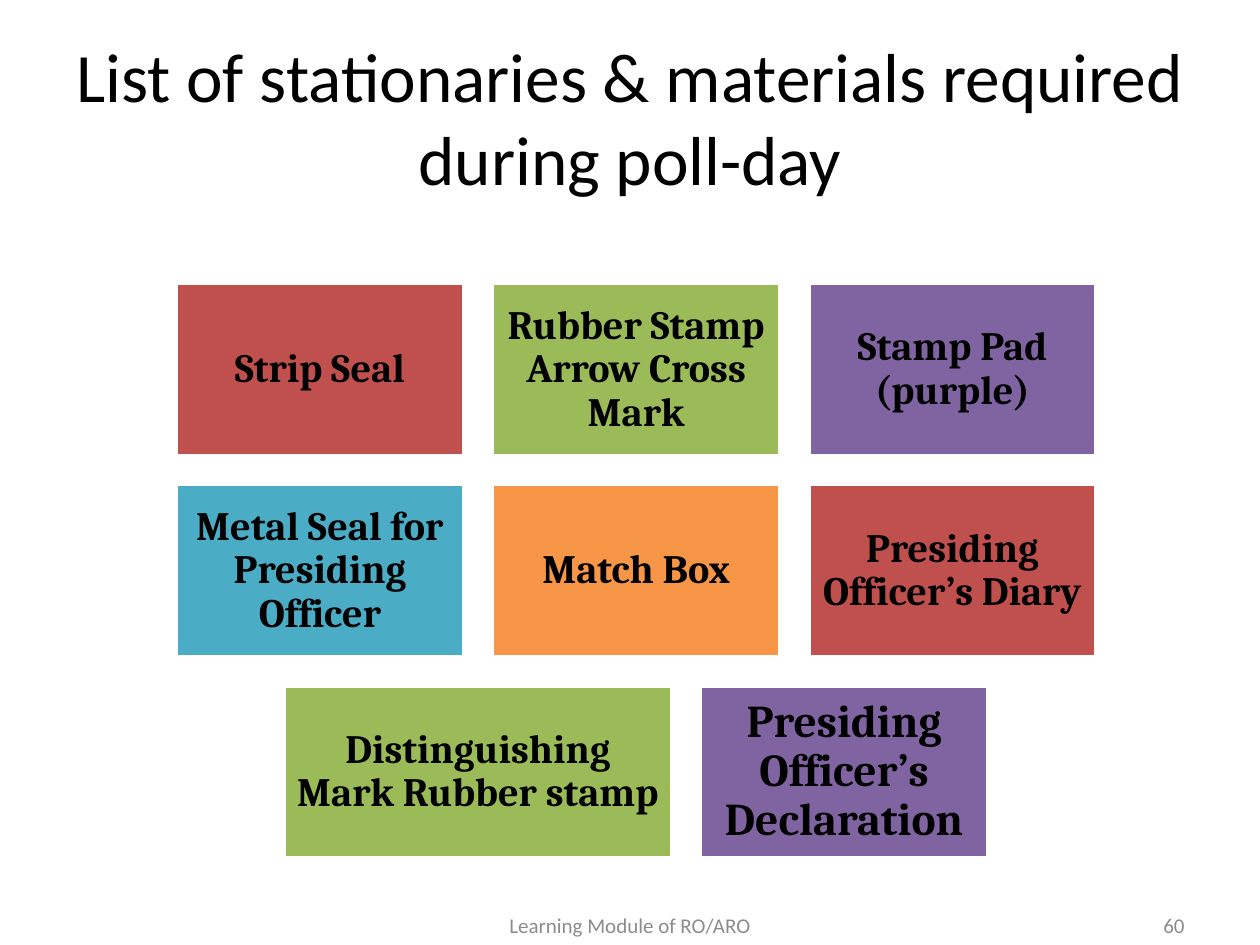
from pptx import Presentation
from pptx.dml.color import RGBColor
from pptx.enum.shapes import MSO_SHAPE
from pptx.enum.text import MSO_ANCHOR, PP_ALIGN
from pptx.util import Inches, Pt

COLORS = {"red": "C0504D", "green": "9BBB59", "purple": "8064A2", "blue": "4BACC6",
          "orange": "F79646", "white": "FFFFFF", "black": "000000", "gray": "8C8C8C"}
FILLS = ["red", "green", "purple", "blue", "orange"]
TILE_W, WIDE_W, GAP = 2.28, 3.07, 0.23
ROWS = [
    [("Strip Seal", TILE_W, 23), ("Rubber Stamp Arrow Cross Mark", TILE_W, 23),
     ("Stamp Pad (purple)", TILE_W, 23)],
    [("Metal Seal for Presiding Officer", TILE_W, 23), ("Match Box", TILE_W, 23),
     ("Presiding Officer’s Diary", TILE_W, 23)],
    [("Distinguishing Mark Rubber stamp", WIDE_W, 23),
     ("Presiding Officer’s Declaration", TILE_W, 26)],
]


def rgb(name):
    """Return the named colour."""
    return RGBColor.from_string(COLORS[name])


def set_text(sp, text, size, font, color, align=PP_ALIGN.CENTER, bold=False):
    """Write one vertically centred paragraph and return it."""
    tf = sp.text_frame
    tf.word_wrap = True
    tf.vertical_anchor = MSO_ANCHOR.MIDDLE
    p = tf.paragraphs[0]
    p.text, p.alignment = text, align
    p.font.size, p.font.name, p.font.bold = Pt(size), font, bold
    p.font.color.rgb = rgb(color)
    return p


def add_label(s, box, text, size, color, align=PP_ALIGN.CENTER):
    """Add a plain text box."""
    sp = s.shapes.add_textbox(*map(Inches, box))
    set_text(sp, text, size, "Calibri", color, align)


def add_tile(s, box, text, size, fill):
    """Add one coloured tile with its item name."""
    sp = s.shapes.add_shape(MSO_SHAPE.RECTANGLE, *map(Inches, box))
    sp.shadow.inherit = False
    sp.fill.solid()
    sp.fill.fore_color.rgb = rgb(fill)
    sp.line.color.rgb = rgb("white")
    sp.line.width = Pt(2)
    tf = sp.text_frame
    tf.margin_left = tf.margin_right = tf.margin_top = tf.margin_bottom = Inches(0.09)
    p = set_text(sp, text, size, "Cambria", "black", bold=True)
    p.line_spacing = 0.9


def add_tiles(s, box):
    """Lay out centred rows of tiles, cycling through the fills."""
    left, top, width, height = box
    tile_h = (height - GAP * (len(ROWS) - 1)) / len(ROWS)
    count = 0
    for i, row in enumerate(ROWS):
        row_w = sum(w for _, w, _ in row) + GAP * (len(row) - 1)
        x = left + (width - row_w) / 2
        y = top + i * (tile_h + GAP)
        for text, w, size in row:
            add_tile(s, (x, y, w, tile_h), text, size, FILLS[count % len(FILLS)])
            x += w + GAP
            count += 1


def add_footer(s, box):
    """Add the centred module name and the slide number at the right."""
    left, top, width, height = box
    mid_w, num_w = 3.17, 2.33
    add_label(s, (left + (width - mid_w) / 2, top, mid_w, height),
              "Learning Module of RO/ARO", 12, "gray")
    add_label(s, (left + width - num_w, top, num_w, height), "60", 12, "gray", PP_ALIGN.RIGHT)


def main():
    """Build and save the slide."""
    prs = Presentation()
    prs.slide_width, prs.slide_height = Inches(10), Inches(7.5)
    s = prs.slides.add_slide(prs.slide_layouts[6])
    add_footer(s, (0.5, 7.14, 9, 0.4))
    add_tiles(s, (1.4, 2.25, 7.3, 4.56))
    add_label(s, (0.5, 0.3, 9, 1.25),
              "List of stationaries & materials required during poll-day", 39.6, "black")
    prs.save("out.pptx")


if __name__ == "__main__":
    main()
